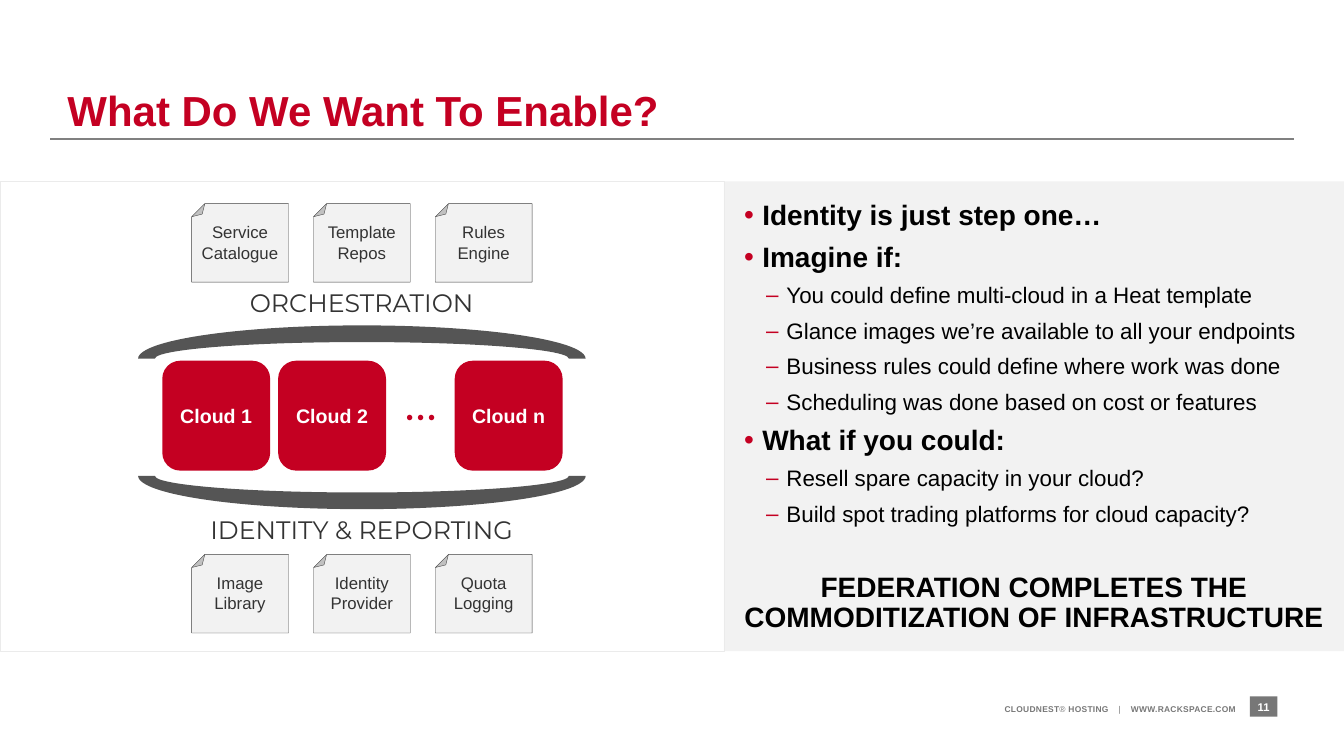
from dataclasses import dataclass
from typing import Any, Optional

from lxml.etree import SubElement
from pptx import Presentation
from pptx.dml.color import RGBColor
from pptx.enum.shapes import MSO_CONNECTOR, MSO_SHAPE
from pptx.enum.text import MSO_ANCHOR, MSO_AUTO_SIZE, PP_ALIGN
from pptx.oxml.ns import qn
from pptx.util import Cm, Pt

RED, GREY, PALE, INK, WHITE = "C40022", "777777", "F2F2F2", "333333", "FFFFFF"


@dataclass(frozen=True)
class Box:
    left: float
    top: float
    width: float
    height: float

    def lengths(self) -> dict[str, Any]:
        return {"left": Cm(self.left), "top": Cm(self.top),
                "width": Cm(self.width), "height": Cm(self.height)}


@dataclass(frozen=True)
class Style:
    size: float
    color: str
    bold: bool = False
    name: str = "Arial"


@dataclass(frozen=True)
class Layer:
    heading: str
    heading_top: float
    arc_top: float
    arc_rotation: int
    card_top: float
    cards: tuple[str, ...]


LAYERS = (
    Layer("ORCHESTRATION", 7.24, 8.2, 0, 5.13,
          ("Service Catalogue", "Template Repos", "Rules Engine")),
    Layer("IDENTITY & REPORTING", 12.95, 11.15, 180, 13.97,
          ("Image Library", "Identity Provider", "Quota Logging")),
)
CLOUDS = {"Cloud 1": 4.09, "Cloud 2": 7.01, "Cloud n": 11.46}
POINTS = (
    (0, "Identity is just step one…"),
    (0, "Imagine if:"),
    (1, "You could define multi-cloud in a Heat template"),
    (1, "Glance images we’re available to all your endpoints"),
    (1, "Business rules could define where work was done"),
    (1, "Scheduling was done based on cost or features"),
    (0, "What if you could:"),
    (1, "Resell spare capacity in your cloud?"),
    (1, "Build spot trading platforms for cloud capacity?"),
)
CLOSING = "FEDERATION COMPLETES THE COMMODITIZATION OF INFRASTRUCTURE"
# Bullet sign, left margin and hanging indent in cm for each level
BULLETS = (("•", 0.46, -0.46), ("–", 1.07, -0.51))
POINT_STYLES = (Style(20, "000000", True), Style(16, "000000"))


def rgb(color: str) -> RGBColor:
    return RGBColor.from_string(color)


def apply(target: Any, values: dict[str, Any]) -> None:
    for attribute, value in values.items():
        setattr(target, attribute, value)


def add_run(paragraph: Any, text: str, style: Style) -> Any:
    run = paragraph.add_run()
    run.text = text
    apply(run.font, {"size": Pt(style.size), "bold": style.bold, "name": style.name})
    run.font.color.rgb = rgb(style.color)
    return run


def format_frame(frame: Any, anchor: MSO_ANCHOR, margin: float = 0) -> None:
    apply(frame, {"word_wrap": True, "auto_size": MSO_AUTO_SIZE.NONE, "vertical_anchor": anchor})
    apply(frame, {f"margin_{side}": Cm(margin) for side in ("left", "top", "right", "bottom")})


def add_text(slide: Any, box: Box, text: str, style: Style,
             anchor: MSO_ANCHOR = MSO_ANCHOR.MIDDLE) -> None:
    frame = slide.shapes.add_textbox(**box.lengths()).text_frame
    format_frame(frame, anchor)
    frame.paragraphs[0].alignment = PP_ALIGN.CENTER
    add_run(frame.paragraphs[0], text, style)


def add_figure(slide: Any, kind: MSO_SHAPE, box: Box, fill: str,
               line: Optional[str] = None, rotation: int = 0) -> Any:
    figure = slide.shapes.add_shape(kind, **box.lengths())
    figure.shadow.inherit = False
    figure.rotation = rotation
    figure.fill.solid()
    figure.fill.fore_color.rgb = rgb(fill)
    if line:
        figure.line.color.rgb = rgb(line)
        figure.line.width = Pt(0.25)
    else:
        figure.line.fill.background()
    return figure


def label_figure(figure: Any, text: str, style: Style, margin: float) -> None:
    format_frame(figure.text_frame, MSO_ANCHOR.MIDDLE, margin)
    figure.text_frame.paragraphs[0].alignment = PP_ALIGN.CENTER
    add_run(figure.text_frame.paragraphs[0], text, style)


def set_bullet(paragraph: Any, level: int) -> None:
    sign, margin, indent = BULLETS[level]
    properties = paragraph._p.get_or_add_pPr()
    properties.set("marL", str(Cm(margin)))
    properties.set("indent", str(Cm(indent)))
    SubElement(SubElement(properties, qn("a:buClr")), qn("a:srgbClr"), val=RED)
    SubElement(properties, qn("a:buFont"), typeface="Arial")
    SubElement(properties, qn("a:buChar"), char=sign)


def add_title(slide: Any) -> None:
    title = slide.shapes.title
    apply(title, Box(1.7, 1.22, 30.48, 2.21).lengths())
    format_frame(title.text_frame, MSO_ANCHOR.BOTTOM)
    heading = title.text_frame.paragraphs[0]
    apply(heading, {"alignment": PP_ALIGN.LEFT, "line_spacing": 0.9})
    add_run(heading, "What Do We Want To Enable?", Style(30, RED, True))
    rule = slide.shapes.add_connector(MSO_CONNECTOR.STRAIGHT, Cm(1.27), Cm(3.51), Cm(32.61), Cm(3.51))
    rule.line.color.rgb = rgb("808080")
    rule.line.width = Pt(1.5)
    SubElement(rule._element.spPr, qn("a:effectLst"))


def add_points(slide: Any) -> None:
    body = slide.placeholders[1]
    apply(body, Box(18.24, 4.57, 15.63, 11.84).lengths())
    body.fill.solid()
    body.fill.fore_color.rgb = rgb(PALE)
    frame = body.text_frame
    format_frame(frame, MSO_ANCHOR.TOP, 0.51)
    for number, (level, text) in enumerate(POINTS):
        point = frame.add_paragraph() if number else frame.paragraphs[0]
        set_bullet(point, level)
        apply(point, {"level": level, "line_spacing": 0.9, "alignment": PP_ALIGN.LEFT,
                      "space_before": Pt(2 if number else 0), "space_after": Pt(6)})
        add_run(point, text, POINT_STYLES[level])
    closing = frame.add_paragraph()
    properties = closing._p.get_or_add_pPr()
    properties.set("marL", "0")
    properties.set("indent", "0")
    SubElement(properties, qn("a:buNone"))
    apply(closing, {"alignment": PP_ALIGN.CENTER, "line_spacing": 0.9, "space_before": Pt(27)})
    add_run(closing, CLOSING, POINT_STYLES[0])


def add_footer(slide: Any) -> None:
    frame = slide.shapes.add_textbox(**Box(7.44, 17.78, 23.7, 0.2).lengths()).text_frame
    format_frame(frame, MSO_ANCHOR.MIDDLE)
    credit = frame.paragraphs[0]
    apply(credit, {"alignment": PP_ALIGN.RIGHT, "line_spacing": 0.9})
    # Letter spacing in hundredths of a point; it opens the gap around the bar
    for text, bold, spacing in (("CLOUDNEST", True, 20), ("®", False, 20), (" HOSTING", True, 20),
                                (" |", False, 540), (" WWW.RACKSPACE.COM", True, 20)):
        run = add_run(credit, text, Style(6, GREY, bold))
        run._r.get_or_add_rPr().set("spc", str(spacing))
    page = add_figure(slide, MSO_SHAPE.RECTANGLE, Box(31.5, 17.55, 0.69, 0.51), GREY)
    label_figure(page, "11", Style(8, WHITE, True), 0)


def add_layer(slide: Any, layer: Layer) -> None:
    add_figure(slide, MSO_SHAPE.BLOCK_ARC, Box(3.48, layer.arc_top, 11.28, 1.68),
               "555555", rotation=layer.arc_rotation)
    add_text(slide, Box(3.63, layer.heading_top, 10.97, 0.76), layer.heading,
             Style(18, INK, name="Montserrat"), MSO_ANCHOR.TOP)
    for column, card in enumerate(layer.cards):
        left = 4.83 + 3.07 * column
        add_figure(slide, MSO_SHAPE.FOLDED_CORNER, Box(left, layer.card_top, 2.44, 1.98),
                   PALE, "404040", 180)
        add_text(slide, Box(left + 0.21, layer.card_top + 0.53, 2.02, 0.89), card, Style(12, INK))


def add_clouds(slide: Any) -> None:
    for name, left in CLOUDS.items():
        cloud = add_figure(slide, MSO_SHAPE.ROUNDED_RECTANGLE, Box(left, 9.09, 2.72, 2.77), RED)
        label_figure(cloud, name, Style(14, WHITE, True), 0.13)
    add_text(slide, Box(9.75, 9.32, 1.7, 1.55), "…", Style(36, RED, name="Montserrat"))


def main() -> None:
    deck = Presentation()
    apply(deck, {"slide_width": Cm(33.87), "slide_height": Cm(19.05)})
    slide = deck.slides.add_slide(deck.slide_layouts[1])
    add_title(slide)
    add_points(slide)
    add_footer(slide)
    # Cloud diagram on the left panel
    add_figure(slide, MSO_SHAPE.RECTANGLE, Box(0, 4.57, 18.24, 11.84), WHITE, "EBEBEB")
    for layer in LAYERS:
        add_layer(slide, layer)
    add_clouds(slide)
    deck.save("out.pptx")


if __name__ == "__main__":
    main()
